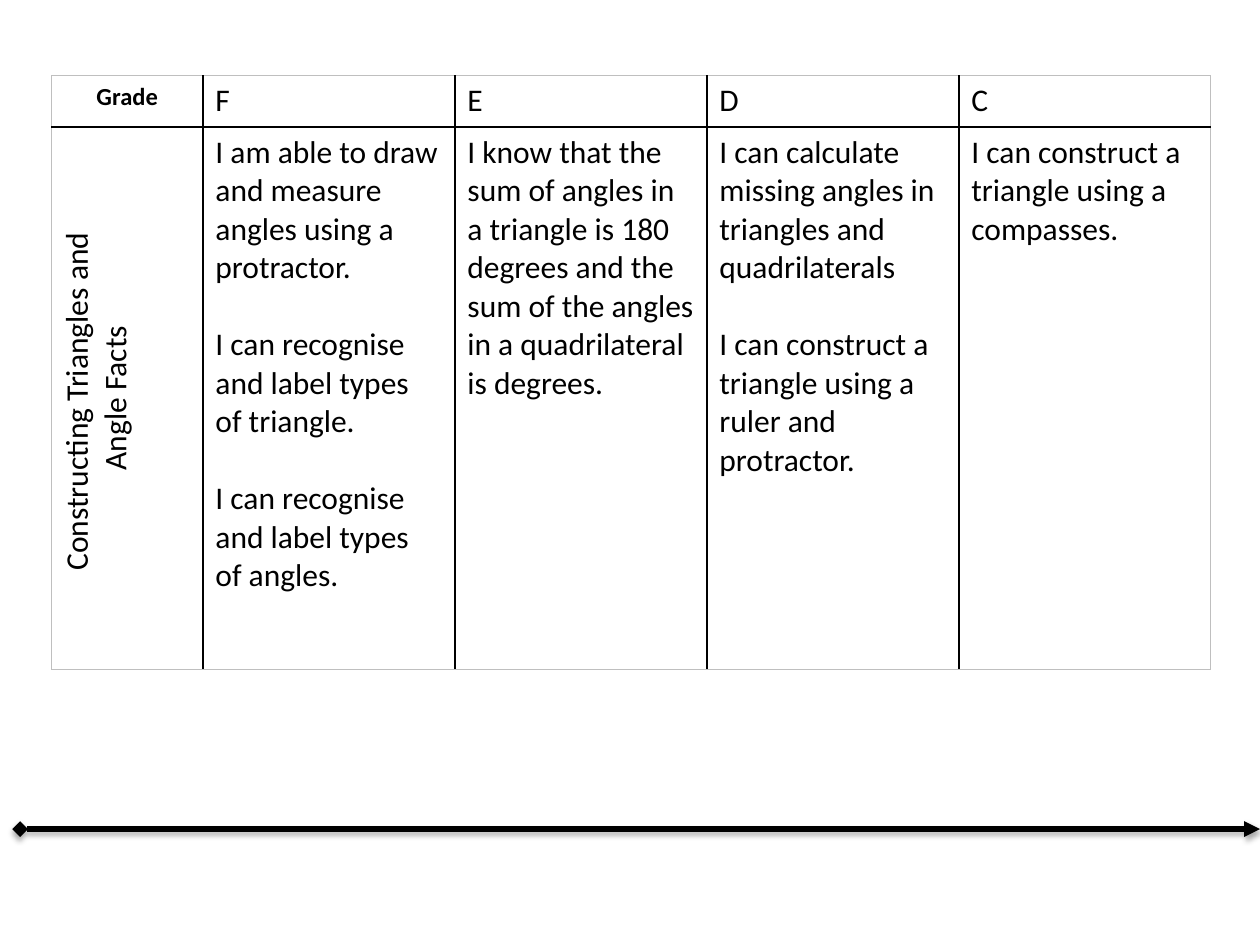
import pptx
import pptx.util
import pptx.dml.color
import pptx.enum.shapes
import pptx.enum.text
import pptx.oxml
import pptx.oxml.ns
from pptx.util import Inches

BLACK = pptx.dml.color.RGBColor(0, 0, 0)
GREY = pptx.dml.color.RGBColor(0xBF, 0xBF, 0xBF)
NAMESPACE = pptx.oxml.ns.nsdecls("a")

GRADES = ["Grade", "F", "E", "D", "C"]
TOPIC = ["Constructing Triangles and ", "Angle Facts"]
SKILLS = [
    ["I am able to draw and measure angles using a protractor.",
     "I can recognise and label types of triangle.",
     "I can recognise and label types of angles."],
    ["I know that the sum of angles in a triangle is 180 degrees and the sum "
     "of the angles in a quadrilateral is degrees."],
    ["I can calculate missing angles in triangles and quadrilaterals",
     "I can construct a triangle using a ruler and protractor."],
    ["I can construct a triangle using a compasses."],
]
ROWS = [[[grade] for grade in GRADES], [TOPIC] + SKILLS]
COLUMN_WIDTHS = [1.2, 2, 2, 2, 2]
ROW_HEIGHTS = [0.41, 4.3]


def add_border(cell, side, color, points):
    cell._tc.get_or_add_tcPr().append(pptx.oxml.parse_xml(
        f'<a:ln{side} {NAMESPACE} w="{pptx.util.Pt(points)}"><a:solidFill>'
        f'<a:srgbClr val="{color}"/></a:solidFill></a:ln{side}>'))


def fill_cell(cell, texts, size, bold, centred, gap):
    frame = cell.text_frame
    for index, text in enumerate(texts):
        para = frame.add_paragraph() if index else frame.paragraphs[0]
        if centred:
            para.alignment = pptx.enum.text.PP_ALIGN.CENTER
        if index and gap:
            para.space_before = pptx.util.Pt(gap)
        span = para.add_run()
        span.text = text
        span.font.name = "Calibri"
        span.font.size = pptx.util.Pt(size)
        span.font.bold = bold
        span.font.color.rgb = BLACK


deck = pptx.Presentation()
deck.slide_width = Inches(10)
deck.slide_height = Inches(7.5)
page = deck.slides.add_slide(deck.slide_layouts[6])

# Table of grades and skills
grid = page.shapes.add_table(
    len(ROWS), len(GRADES), Inches(0.41), Inches(0.6),
    Inches(sum(COLUMN_WIDTHS)), Inches(sum(ROW_HEIGHTS))).table
grid.first_row = False
grid.horz_banding = False
for column, width in zip(grid.columns, COLUMN_WIDTHS):
    column.width = Inches(width)
for row, height in zip(grid.rows, ROW_HEIGHTS):
    row.height = Inches(height)

last_row, last_column = len(ROWS) - 1, len(GRADES) - 1
for r, row_texts in enumerate(ROWS):
    for c, texts in enumerate(row_texts):
        cell = grid.cell(r, c)
        is_label = c == 0
        is_corner = is_label and r == 0
        fill_cell(cell, texts, 14 if is_corner else 18, is_corner,
                  is_label, 0 if is_label else 22)

        # Black rules inside, a thin grey frame outside
        outer_sides = {"L": c == 0, "R": c == last_column,
                       "T": r == 0, "B": r == last_row}
        for side, is_outer in outer_sides.items():
            add_border(cell, side, GREY if is_outer else BLACK,
                       0.5 if is_outer else 1)
        cell.fill.background()

# Topic reads upwards
grid.cell(1, 0)._tc.get_or_add_tcPr().set("vert", "vert270")

# Progress arrow
arrow = page.shapes.add_connector(
    pptx.enum.shapes.MSO_CONNECTOR.STRAIGHT,
    Inches(0.16), Inches(6.58), Inches(10), Inches(6.58))
arrow.line.color.rgb = BLACK
arrow.line.width = pptx.util.Pt(3)
for end, kind in (("headEnd", "diamond"), ("tailEnd", "triangle")):
    arrow.line._get_or_add_ln().append(
        pptx.oxml.parse_xml(f'<a:{end} {NAMESPACE} type="{kind}"/>'))
arrow._element.spPr.append(pptx.oxml.parse_xml(
    f'<a:effectLst {NAMESPACE}><a:outerShdw blurRad="{pptx.util.Pt(3.1)}" '
    f'dist="{pptx.util.Pt(1.8)}" dir="5400000" rotWithShape="0">'
    f'<a:srgbClr val="{BLACK}"><a:alpha val="35000"/></a:srgbClr>'
    '</a:outerShdw></a:effectLst>'))

deck.save("out.pptx")
